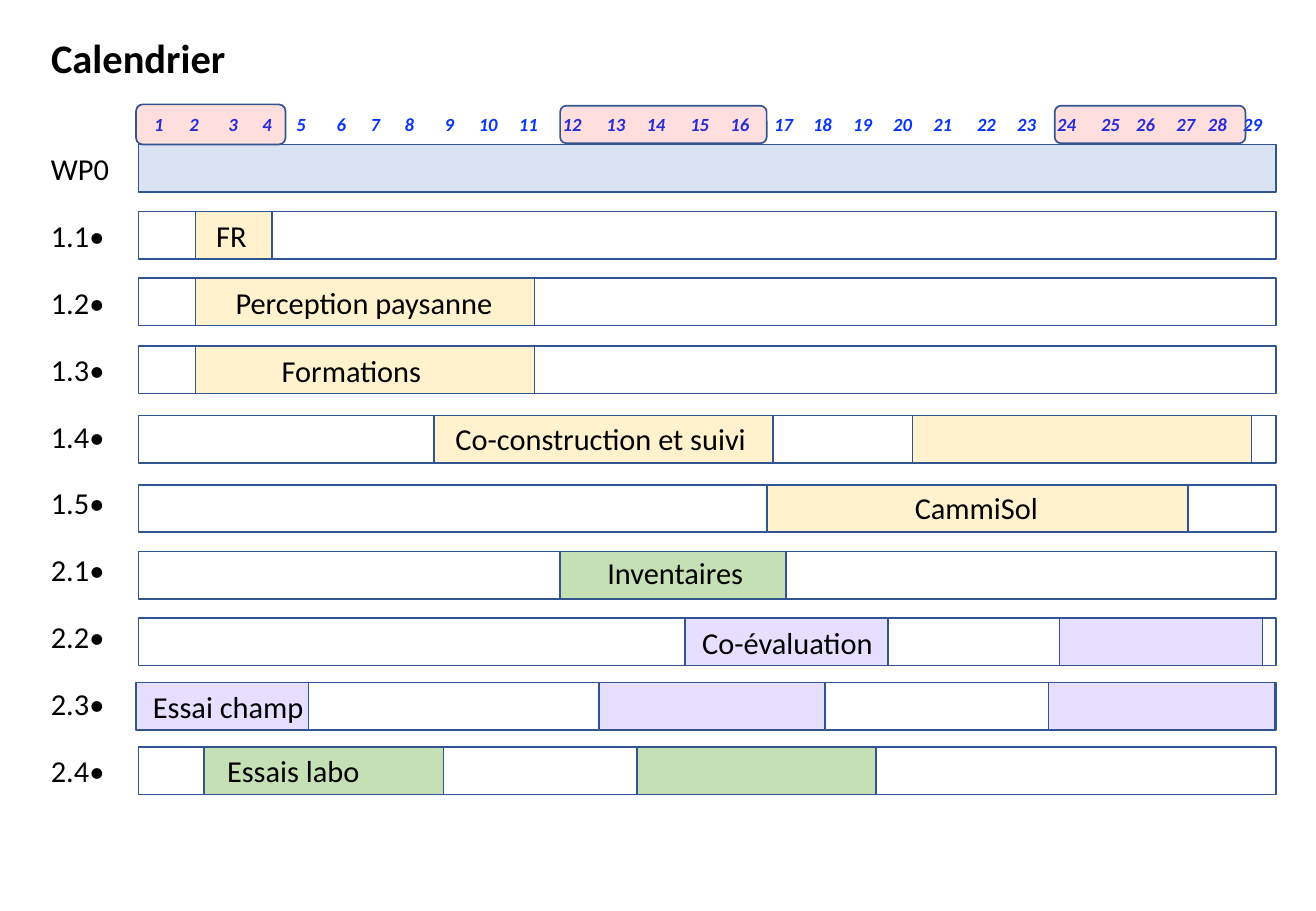
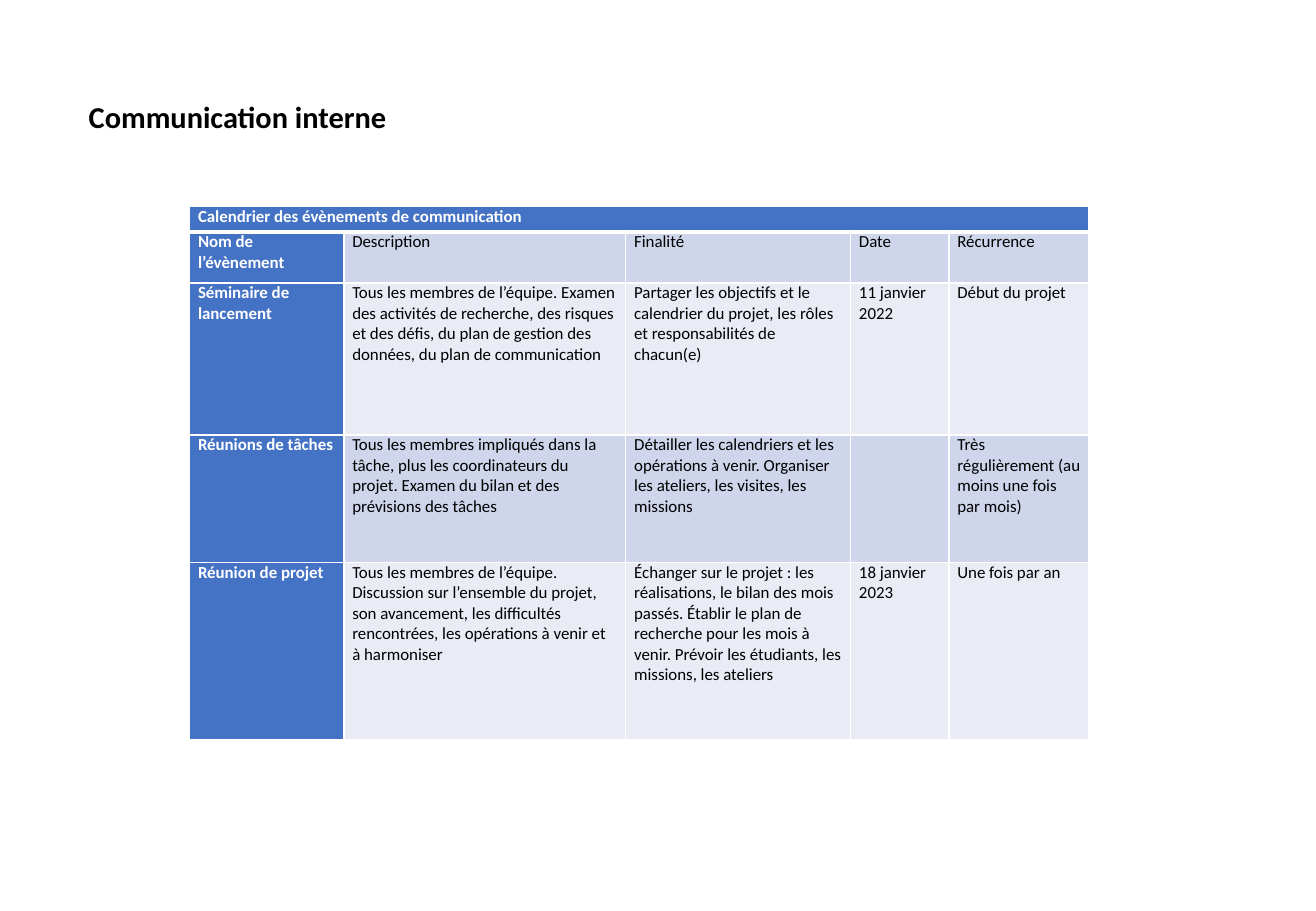
from lxml import etree
from pptx import Presentation
from pptx.dml.color import RGBColor
from pptx.enum.shapes import MSO_SHAPE
from pptx.enum.text import MSO_ANCHOR, MSO_AUTO_SIZE, PP_ALIGN
from pptx.oxml.ns import qn
from pptx.util import Pt

PX = 9144
RECT, ROUNDED = MSO_SHAPE.RECTANGLE, MSO_SHAPE.ROUNDED_RECTANGLE
TOP, LEFT, FIT = MSO_ANCHOR.TOP, PP_ALIGN.LEFT, MSO_AUTO_SIZE.SHAPE_TO_FIT_TEXT
TITLE_ONLY = 5

FONT = "Calibri"
BLACK, WHITE, OUTLINE, MONTH_BLUE = "000000", "FFFFFF", "325491", "0833F8"
PALE_BLUE, YELLOW, GREEN, VIOLET, RED = "DAE3F3", "FFF2CC", "C5E0B4", "E6DFFF", "FF0000"
HEADER, BANDS = "4472C4", ("E9EBF5", "CFD5EA")

ROW_LEFT, ROW_W, BAR_H = 114, 936, 39
# label, top, bar colour, bars (left, width), caption (text, left, top, width)
TASKS = [
    ("WP0", 119, PALE_BLUE, [(ROW_LEFT, ROW_W)], None),
    ("1.1•", 174, YELLOW, [(161, 63)], ("FR", 168, 174, 45)),
    ("1.2•", 229, YELLOW, [(161, 279)], ("Perception paysanne", 184, 229, 234)),
    ("1.3•", 285, YELLOW, [(161, 279)], ("Formations", 222, 285, 136)),
    ("1.4•", 342, YELLOW, [(357, 279), (751, 279)],
     ("Co-construction et suivi", 365, 341, 262)),
    ("1.5•", 399, YELLOW, [(631, 347)], ("CammiSol", 743, 398, 123)),
    ("2.1•", 454, GREEN, [(461, 186)], ("Inventaires", 490, 451, 133)),
    ("2.2•", 509, VIOLET, [(564, 167), (872, 167)], ("Co-évaluation", 568, 509, 162)),
    ("2.3•", 562, VIOLET, [(112, 142), (493, 186), (863, 186)],
     ("Essai champ", 116, 562, 145)),
    ("2.4•", 615, GREEN, [(168, 197), (524, 197)], ("Essais labo", 177, 614, 130)),
]
MONTHS_LEFT, INSET = 117, 10
MONTH_CENTRES = [131, 160, 192, 220, 248, 281, 309, 337, 370, 402, 435, 471, 507, 540, 576,
                 609, 645, 677, 710, 743, 776, 812, 845, 878, 914, 943, 976, 1002, 1031]
SEASONS = [(112, 86, 123, 33), (461, 87, 170, 31), (868, 87, 157, 31)]

COL_WIDTHS = [127, 232, 185, 81, 115]
ROW_HEIGHTS = [21, 42, 125, 105, 146]
EVENTS = [
    ["Calendrier des évènements de communication", "", "", "", ""],
    ["Nom de l’évènement", "Description", "Finalité", "Date", "Récurrence"],
    ["Séminaire de lancement",
     "Tous les membres de l’équipe. Examen des activités de recherche, des risques et des "
     "défis, du plan de gestion des données, du plan de communication",
     "Partager les objectifs et le calendrier du projet, les rôles et responsabilités de "
     "chacun(e)",
     "11 janvier 2022", "Début du projet"],
    ["Réunions de tâches",
     "Tous les membres impliqués dans la tâche, plus les coordinateurs du projet. Examen du "
     "bilan et des prévisions des tâches",
     "Détailler les calendriers et les opérations à venir. Organiser les ateliers, les "
     "visites, les missions",
     "", "Très régulièrement (au moins une fois par mois)"],
    ["Réunion de projet",
     "Tous les membres de l’équipe. Discussion sur l’ensemble du projet, son avancement, les "
     "difficultés rencontrées, les opérations à venir et à harmoniser",
     "Échanger sur le projet : les réalisations, le bilan des mois passés. Établir le plan "
     "de recherche pour les mois à venir. Prévoir les étudiants, les missions, les ateliers",
     "18 janvier 2023", "Une fois par an"],
]


def rgb(value):
    return RGBColor.from_string(value)


def box(*lengths):
    return [n * PX for n in lengths]


def write(tf, text, size, color=BLACK, bold=False, italic=False, after=None):
    tf.text = text
    for p in tf.paragraphs:
        p.alignment = LEFT
        if after is not None:
            p.space_after = Pt(after)
        f = p.font
        f.name, f.size, f.bold, f.italic = FONT, Pt(size), bold, italic
        f.color.rgb = rgb(color)


def add_slide(prs, title, size, *place):
    slide = prs.slides.add_slide(prs.slide_layouts[TITLE_ONLY])
    sp = slide.shapes.title
    sp.left, sp.top, sp.width, sp.height = box(*place)
    tf = sp.text_frame
    write(tf, title, size, bold=True)
    tf.word_wrap, tf.vertical_anchor, tf.auto_size = False, TOP, FIT
    return slide


def add_text(slide, place, text, size, wrap=False, **style):
    tf = slide.shapes.add_textbox(*box(*place)).text_frame
    write(tf, text, size, **style)
    tf.word_wrap, tf.auto_size = wrap, FIT
    return tf


def add_bar(slide, place, color, kind=RECT):
    sp = slide.shapes.add_shape(kind, *box(*place))
    sp.shadow.inherit = False
    sp.fill.solid()
    sp.fill.fore_color.rgb = rgb(color)
    sp.line.color.rgb = rgb(OUTLINE)
    sp.line.width = Pt(1)
    return sp


def add_months(slide):
    months = "\t".join(str(n + 1) for n in range(len(MONTH_CENTRES)))
    tf = add_text(slide, (MONTHS_LEFT, 88, 947, 29), months, 11, wrap=True,
                  color=MONTH_BLUE, bold=True, italic=True)
    tabs = etree.Element(qn("a:tabLst"))
    for centre in MONTH_CENTRES[1:]:
        pos = (centre - MONTHS_LEFT - INSET) * PX
        etree.SubElement(tabs, qn("a:tab"), pos=str(pos), algn="ctr")
    pPr = tf.paragraphs[0]._p.get_or_add_pPr()
    pPr.find(qn("a:defRPr")).addprevious(tabs)


def add_borders(cell, row):
    tcPr = cell._tc.get_or_add_tcPr()
    for side in "LRTB":
        thick = (row, side) in ((0, "B"), (1, "T"))
        ln = etree.SubElement(tcPr, qn("a:ln" + side), w=str(Pt(3 if thick else 1)))
        fill = etree.SubElement(ln, qn("a:solidFill"))
        etree.SubElement(fill, qn("a:srgbClr"), val=WHITE)


def build_calendar(prs):
    slide = add_slide(prs, "Calendrier", 24, 32, 22, 165, 50)
    add_text(slide, (32, 119, 71, 540), "\n".join(t[0] for t in TASKS), 18, after=18)
    for label, top, color, bars, caption in TASKS:
        if caption:
            add_bar(slide, (ROW_LEFT, top, ROW_W, BAR_H), WHITE)
        for left, width in bars:
            add_bar(slide, (left, top, width, BAR_H), color)
        if caption:
            text, left, text_top, width = caption
            add_text(slide, (left, text_top, width, 40), text, 18)
    add_months(slide)
    for place in SEASONS:
        sp = add_bar(slide, place, RED, ROUNDED)
        clr = sp._element.spPr.find(qn("a:solidFill")).find(qn("a:srgbClr"))
        etree.SubElement(clr, qn("a:alpha"), val="13000")


def build_communication(prs):
    slide = add_slide(prs, "Communication interne", 18, 63, 76, 267, 40)
    size = len(ROW_HEIGHTS), len(COL_WIDTHS)
    place = box(156, 170, sum(COL_WIDTHS), sum(ROW_HEIGHTS))
    table = slide.shapes.add_table(*size, *place).table
    for col, width in zip(table.columns, COL_WIDTHS):
        col.width = width * PX
    for row, height in zip(table.rows, ROW_HEIGHTS):
        row.height = height * PX
    for r, texts in enumerate(EVENTS):
        for c, text in enumerate(texts):
            cell = table.cell(r, c)
            head = r == 0 or c == 0
            add_borders(cell, r)
            cell.margin_left = cell.margin_right = 7 * PX
            cell.margin_top = cell.margin_bottom = 0
            cell.fill.solid()
            cell.fill.fore_color.rgb = rgb(HEADER if head else BANDS[r % 2])
            write(cell.text_frame, text, 10, WHITE if head else BLACK, bold=head)
    table.cell(0, 0).merge(table.cell(0, len(COL_WIDTHS) - 1))


def main():
    prs = Presentation()
    prs.slide_width, prs.slide_height = box(1083, 750)
    build_calendar(prs)
    build_communication(prs)
    prs.save("out.pptx")


if __name__ == "__main__":
    main()
